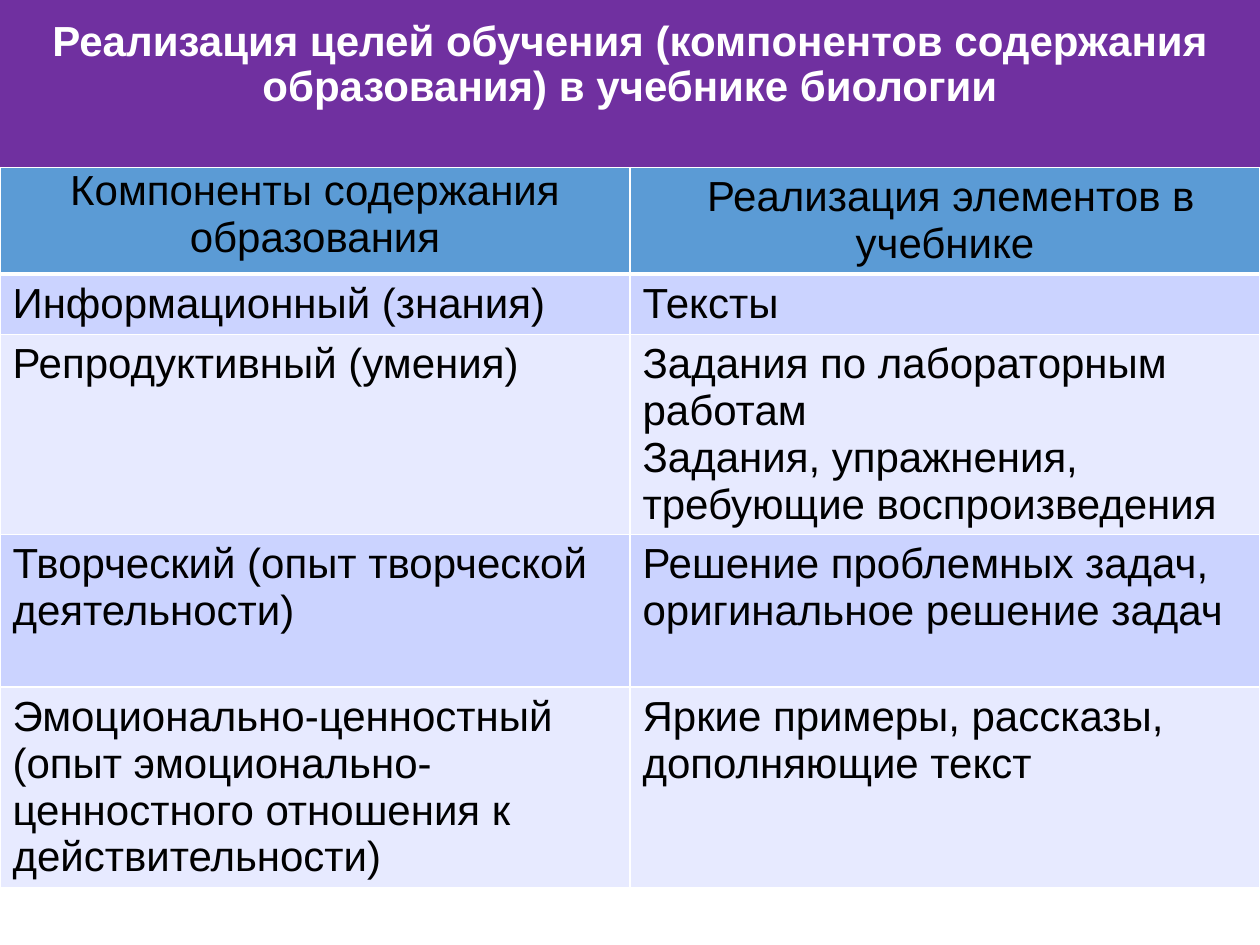
from lxml import etree
from pptx import Presentation
from pptx.dml.color import RGBColor
from pptx.enum.text import MSO_ANCHOR, MSO_AUTO_SIZE, PP_ALIGN
from pptx.oxml.ns import qn
from pptx.util import Inches, Pt

CENTER, LEFT = PP_ALIGN.CENTER, PP_ALIGN.LEFT
BOTTOM, NO_AUTOFIT = MSO_ANCHOR.BOTTOM, MSO_AUTO_SIZE.NONE

PURPLE = RGBColor(0x70, 0x30, 0xA0)
BLUE = RGBColor(0x5B, 0x9B, 0xD5)
LILAC = RGBColor(0xCB, 0xD3, 0xFF)
PALE = RGBColor(0xE7, 0xEA, 0xFF)
WHITE = RGBColor(0xFF, 0xFF, 0xFF)
BLACK = RGBColor(0, 0, 0)

TITLE = "Реализация целей обучения (компонентов содержания образования) в учебнике биологии"
# Each row: height in inches, then the paragraphs of its two cells
ROWS = [
    (0.83, ["Компоненты содержания образования"], [" Реализация элементов в учебнике"]),
    (0.48, ["Информационный (знания)"], ["Тексты"]),
    (1.59, ["Репродуктивный (умения)"],
     ["Задания по лабораторным работам", "Задания, упражнения, требующие воспроизведения"]),
    (1.21, ["Творческий (опыт творческой деятельности)"],
     ["Решение проблемных задач, оригинальное решение задач"]),
    (1.59, ["Эмоционально-ценностный",
            "(опыт эмоционально-ценностного отношения к действительности)"],
     ["Яркие примеры, рассказы, дополняющие текст"]),
]
SLIDE_W, SLIDE_H, TITLE_H = 10, 7.5, 1.33


def write(frame, paragraphs, color, bold, align):
    frame.text = "\n".join(paragraphs)
    font_format = {"name": "Arial", "size": Pt(24), "bold": bold}
    for paragraph in frame.paragraphs:
        paragraph.alignment = align
        for run in paragraph.runs:
            for key, value in font_format.items():
                setattr(run.font, key, value)
            run.font.color.rgb = color


def add_borders(cell, widths):
    """Draw white cell borders; widths maps each side's tag to points."""
    properties = cell._tc.get_or_add_tcPr()
    for position, (side, width) in enumerate(widths.items()):
        line = etree.Element(qn(f"a:{side}"), w=str(Pt(width)))
        fill = etree.SubElement(line, qn("a:solidFill"))
        etree.SubElement(fill, qn("a:srgbClr"), val=str(WHITE))
        properties.insert(position, line)


def add_title(slide):
    title = slide.shapes.title
    place = {"left": 0, "top": 0, "width": SLIDE_W, "height": TITLE_H}
    for key, value in place.items():
        setattr(title, key, Inches(value))
    title.fill.solid()
    title.fill.fore_color.rgb = PURPLE
    frame = title.text_frame
    frame.word_wrap = True
    frame.auto_size = NO_AUTOFIT
    frame.vertical_anchor = BOTTOM
    frame.margin_bottom = Inches(0.45)
    write(frame, [TITLE], WHITE, True, CENTER)
    frame.paragraphs[0].line_spacing = 0.9


def add_components_table(slide):
    height = sum(row[0] for row in ROWS)
    table = slide.shapes.add_table(
        len(ROWS), 2, 0, Inches(TITLE_H), Inches(SLIDE_W), Inches(height)).table
    for r, (row_height, *texts) in enumerate(ROWS):
        table.rows[r].height = Inches(row_height)
        header = r == 0
        color = BLUE if header else (LILAC if r % 2 else PALE)
        borders = {"lnL": 1, "lnR": 1, "lnT": 3 if r == 1 else 1, "lnB": 3 if header else 1}
        for c, paragraphs in enumerate(texts):
            cell = table.cell(r, c)
            cell.fill.solid()
            cell.fill.fore_color.rgb = color
            write(cell.text_frame, paragraphs, BLACK, False, CENTER if header else LEFT)
            add_borders(cell, borders)
    corner = table.cell(0, 0)
    margins = {"margin_left": 0.07, "margin_right": 0.07, "margin_top": 0, "margin_bottom": 0}
    for key, value in margins.items():
        setattr(corner, key, Inches(value))


def main():
    deck = Presentation()
    deck.slide_width, deck.slide_height = Inches(SLIDE_W), Inches(SLIDE_H)
    slide = deck.slides.add_slide(deck.slide_layouts.get_by_name("Title Only"))
    add_title(slide)
    add_components_table(slide)
    deck.save("out.pptx")


if __name__ == "__main__":
    main()
